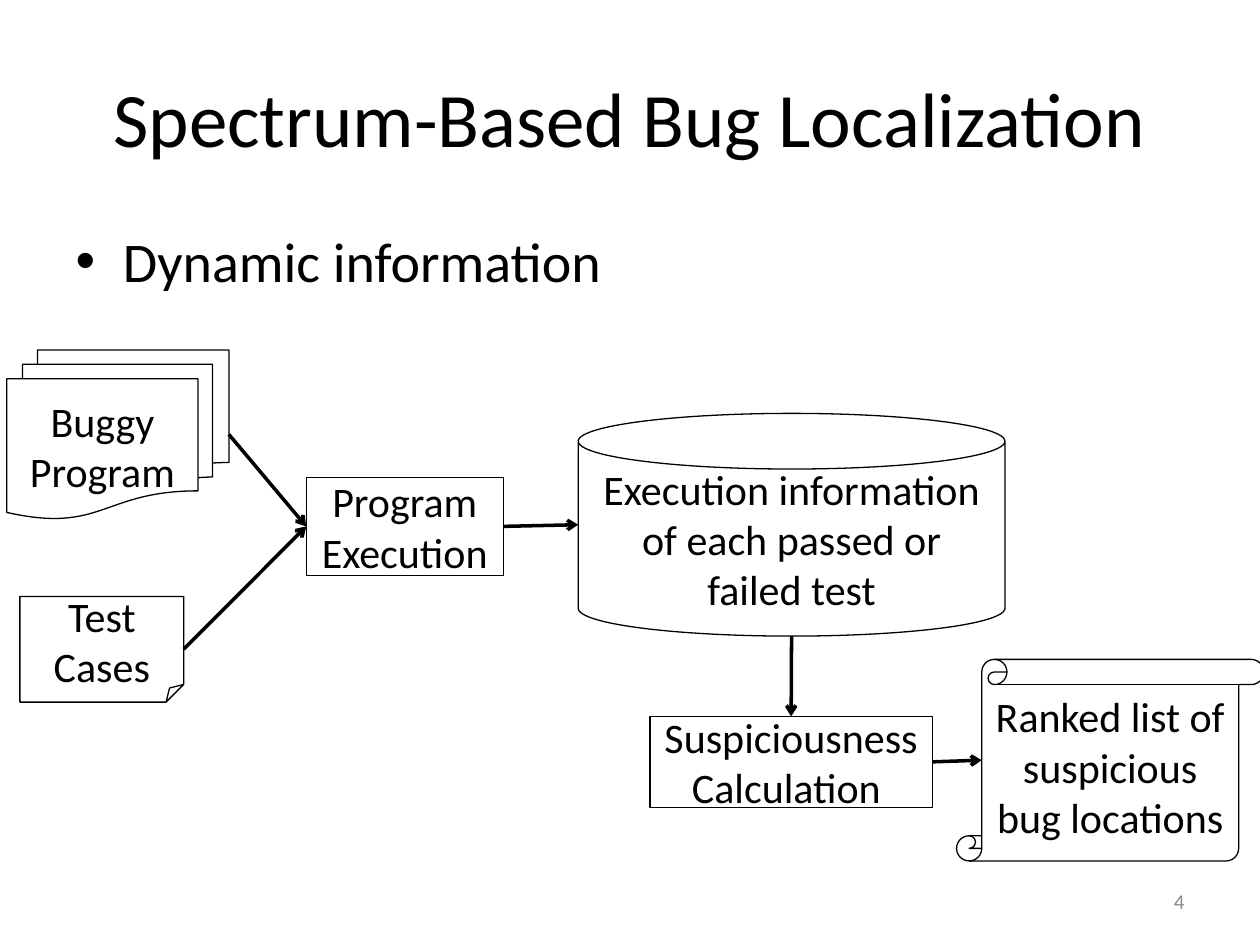
"""Build the slide on spectrum-based bug localization."""
from dataclasses import dataclass

from lxml import etree
from pptx import Presentation
from pptx.dml.color import RGBColor
from pptx.enum.shapes import MSO_CONNECTOR, MSO_SHAPE
from pptx.enum.text import MSO_ANCHOR, PP_ALIGN
from pptx.oxml.ns import qn
from pptx.util import Pt

MULTI = MSO_SHAPE.FLOWCHART_MULTIDOCUMENT
NOTE = MSO_SHAPE.FOLDED_CORNER
RECT = MSO_SHAPE.RECTANGLE
CAN = MSO_SHAPE.CAN
SCROLL = MSO_SHAPE.VERTICAL_SCROLL
LINE = MSO_CONNECTOR.STRAIGHT
MID, TOP = MSO_ANCHOR.MIDDLE, MSO_ANCHOR.TOP
LEFT, CENTER, RIGHT = PP_ALIGN.LEFT, PP_ALIGN.CENTER, PP_ALIGN.RIGHT

COLORS = {"ink": "000000", "paper": "FFFFFF", "gray": "8C8C8C"}
FONT = "Calibri"


@dataclass
class Node:
    kind: int
    text: str
    x: float
    y: float
    w: float
    h: float
    solid: bool = False
    inset: float = 0

    @property
    def west(self) -> tuple:
        return self.x + self.inset, self.y + self.h / 2

    @property
    def east(self) -> tuple:
        return self.x + self.w, self.y + self.h / 2

    @property
    def north(self) -> tuple:
        return self.x + self.w / 2, self.y

    @property
    def south(self) -> tuple:
        return self.x + self.w / 2, self.y + self.h


def color(name: str) -> RGBColor:
    return RGBColor.from_string(COLORS[name])


def place(shape, x: float, y: float, w: float, h: float) -> None:
    shape.left, shape.top, shape.width, shape.height = map(Pt, (x, y, w, h))


def write(shape, text: str, size: float = 24, ink: str = "ink",
          align: int = CENTER, anchor: int = MID) -> None:
    frame = shape.text_frame
    frame.word_wrap = True
    frame.vertical_anchor = anchor
    para = frame.paragraphs[0]
    para.alignment = align
    run = para.add_run()
    run.text = text
    run.font.name = FONT
    run.font.size = Pt(size)
    run.font.color.rgb = color(ink)


def draw(slide, node: Node) -> None:
    box = map(Pt, (node.x, node.y, node.w, node.h))
    shape = slide.shapes.add_shape(node.kind, *box)
    shape.shadow.inherit = False
    if node.solid:
        shape.fill.solid()
        shape.fill.fore_color.rgb = color("paper")
    else:
        shape.fill.background()
    shape.line.color.rgb = color("ink")
    shape.line.width = Pt(0.75)
    write(shape, node.text)


def link(slide, start: tuple, end: tuple) -> None:
    line = slide.shapes.add_connector(LINE, *map(Pt, start + end))
    line.line.color.rgb = color("ink")
    line.line.width = Pt(2)
    etree.SubElement(line.line._get_or_add_ln(), qn("a:tailEnd"), type="arrow")
    etree.SubElement(line._element.spPr, qn("a:effectLst"))


def main() -> None:
    deck = Presentation()
    deck.slide_width, deck.slide_height = Pt(720), Pt(540)
    slide = deck.slides.add_slide(deck.slide_layouts[1])
    title, body = slide.placeholders
    place(title, 36, 21.6, 648, 90)
    write(title, "Spectrum-Based Bug Localization", size=44)
    place(body, 36, 126, 648, 356.4)
    write(body, "Dynamic information", size=32, align=LEFT, anchor=TOP)

    buggy = Node(MULTI, "Buggy Program", 3.9, 200, 126.9, 96.5, solid=True)
    tests = Node(NOTE, "Test Cases", 11.4, 340.8, 93.6, 60.4)
    run = Node(RECT, "Program Execution", 175, 272.8, 112.6, 56)
    info = Node(CAN, "Execution information of each passed or failed test",
                330.4, 236.2, 243.9, 127.3, solid=True)
    calc = Node(RECT, "Suspiciousness Calculation ", 371.4, 409.4, 161.4, 51.9)
    rank = Node(SCROLL, "Ranked list of suspicious bug locations",
                546.6, 376.8, 175.6, 115.2, inset=14.4)
    for node in (buggy, tests, run, info, calc, rank):
        draw(slide, node)
    for start, end in ((buggy.east, run.west), (tests.east, run.west),
                       (run.east, info.west), (info.south, calc.north),
                       (calc.east, rank.west)):
        link(slide, start, end)

    number = slide.shapes.add_textbox(*map(Pt, (516, 500.5, 168, 28.8)))
    write(number, "4", size=12, ink="gray", align=RIGHT)
    deck.save("out.pptx")


if __name__ == "__main__":
    main()
